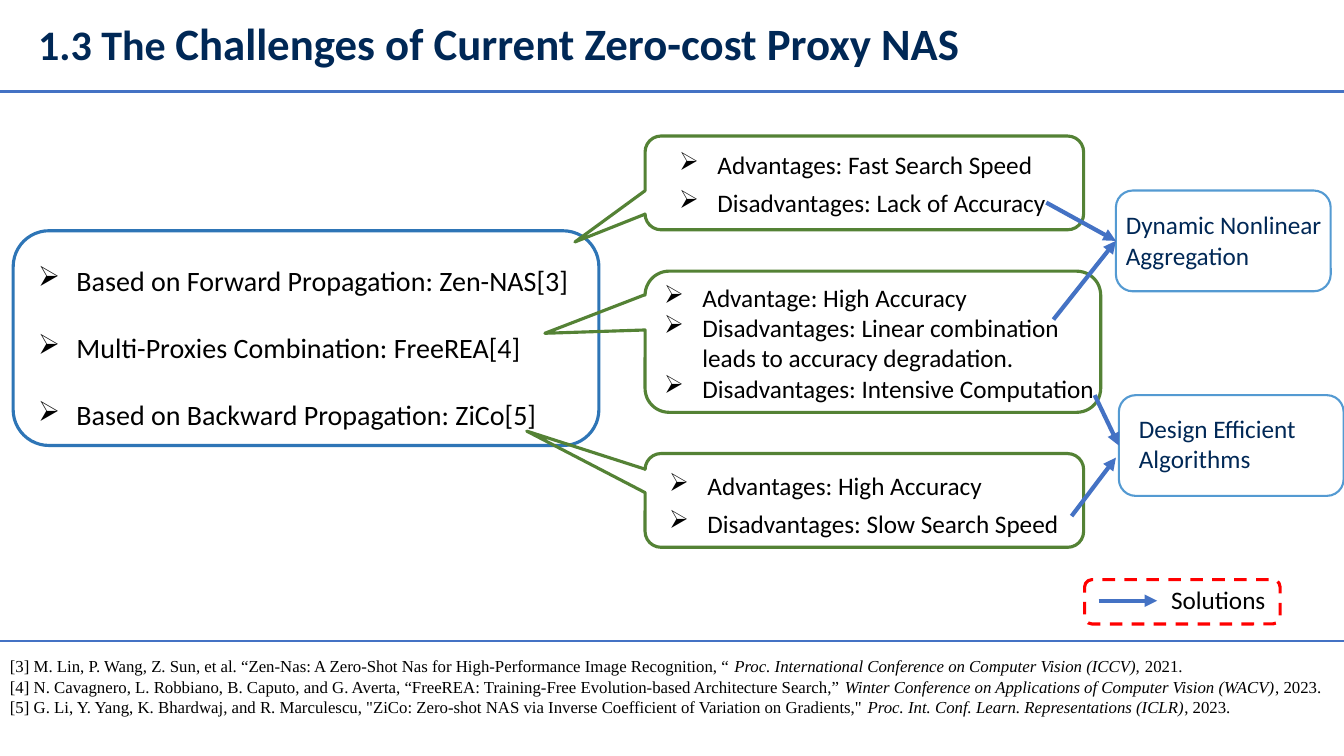
from lxml import etree
from pptx import Presentation
from pptx.dml.color import RGBColor
from pptx.enum.dml import MSO_LINE
from pptx.enum.shapes import MSO_CONNECTOR, MSO_SHAPE
from pptx.enum.text import MSO_ANCHOR, MSO_AUTO_SIZE
from pptx.oxml.ns import qn
from pptx.util import Inches, Pt

ROUNDED = MSO_SHAPE.ROUNDED_RECTANGLE
CALLOUT = MSO_SHAPE.ROUNDED_RECTANGULAR_CALLOUT
STRAIGHT = MSO_CONNECTOR.STRAIGHT
DASH = MSO_LINE.DASH
MIDDLE = MSO_ANCHOR.MIDDLE
GROW = MSO_AUTO_SIZE.SHAPE_TO_FIT_TEXT
LEFT_SIDE = 1

COLORS = {
    "navy": "002856",
    "black": "000000",
    "rule": "4472C4",
    "method": "2E75B6",
    "trait": "548235",
    "solution": "549AD2",
    "legend": "FF0000",
}


class Board:
    """A blank slide on a grid of 100 columns by 100 rows."""

    def __init__(self, deck):
        self.slide = deck.slides.add_slide(deck.slide_layouts[6])
        self.shapes = self.slide.shapes
        self.column = deck.slide_width / 100
        self.row = deck.slide_height / 100

    def place(self, *lengths):
        """Turn alternating columns and rows into EMU."""
        units = (self.column, self.row) * 2
        return [round(length * unit) for length, unit in zip(lengths, units)]

    def stroke(self, line, color, width):
        line.color.rgb = RGBColor.from_string(COLORS[color])
        line.width = Pt(width)

    def outline(self, kind, area, color, width=2.25, adjustments=()):
        shape = self.shapes.add_shape(kind, *self.place(*area))
        shape.shadow.inherit = False
        shape.fill.background()
        self.stroke(shape.line, color, width)
        for index, value in enumerate(adjustments):
            shape.adjustments[index] = value
        return shape

    def line(self, start, end, width=1.75, arrow=False, target=None):
        connector = self.shapes.add_connector(STRAIGHT, *self.place(*start, *end))
        if target is not None:
            connector.end_connect(target, LEFT_SIDE)
        self.stroke(connector.line, "rule", width)
        if arrow:
            etree.SubElement(connector.line._get_or_add_ln(), qn("a:tailEnd"), type="triangle")
        etree.SubElement(connector._element.spPr, qn("a:effectLst"))

    def arrow(self, start, end, target=None):
        self.line(start, end, 3, True, target)

    def text(self, area, paragraphs, size=18, color="black", font="Calibri",
             spacing=None, bullet=False, bold=None):
        """Each paragraph is a string or a list of (text, run font settings)."""
        box = self.shapes.add_textbox(*self.place(*area))
        frame = box.text_frame
        frame.word_wrap = True
        frame.auto_size = GROW
        for index, content in enumerate(paragraphs):
            paragraph = frame.paragraphs[0] if index == 0 else frame.add_paragraph()
            if spacing:
                paragraph.line_spacing = spacing
            if bullet:
                properties = paragraph._p.get_or_add_pPr()
                indent = Inches(0.38)
                properties.set("marL", str(indent))
                properties.set("indent", str(-indent))
                etree.SubElement(properties, qn("a:buChar"), char="➢")
            paragraph.font.name = font
            paragraph.font.size = Pt(size)
            paragraph.font.bold = bold
            paragraph.font.color.rgb = RGBColor.from_string(COLORS[color])
            pieces = [(content, {})] if isinstance(content, str) else content
            for words, settings in pieces:
                run = paragraph.add_run()
                run.text = words
                for name, value in settings.items():
                    setattr(run.font, name, value)
        return frame


REFERENCES = [
    ("[3] M. Lin, P. Wang, Z. Sun, et al. “Zen-Nas: A Zero-Shot Nas for "
     "High-Performance Image Recognition, “ ",
     "Proc. International Conference on Computer Vision (ICCV), ", "2021."),
    ("[4] N. Cavagnero, L. Robbiano, B. Caputo, and G. Averta, “FreeREA: "
     "Training-Free Evolution-based Architecture Search,” ",
     "Winter Conference on Applications of Computer Vision (WACV)", ", 2023."),
    ("[5] G. Li, Y. Yang, K. Bhardwaj, and R. Marculescu, \"ZiCo: Zero-shot NAS "
     "via Inverse Coefficient of Variation on Gradients,\" ",
     "Proc. Int. Conf. Learn. Representations (ICLR)", ", 2023."),
]

METHODS = [
    "Based on Forward Propagation: Zen-NAS[3]",
    "Multi-Proxies Combination: FreeREA[4]",
    "Based on Backward Propagation: ZiCo[5]",
]

# Callout area, pointer position, text area, line spacing, statements
TRAITS = [
    ((48, 18, 32.63, 12.4), (-0.66, 0.63), (49.8, 18.13, 33.45, 15.47), 1.25,
     ["Advantages: Fast Search Speed", "Disadvantages: Lack of Accuracy"]),
    ((48, 60, 32.63, 12.4), (-0.77, -0.74), (49.05, 60.53, 34.95, 11.07), 1.25,
     ["Advantages: High Accuracy", "Disadvantages: Slow Search Speed"]),
    ((48, 35.87, 33.9, 18.67), (-0.72, -0.06), (48.68, 36.67, 34.35, 26), None,
     ["Advantage: High Accuracy",
      "Disadvantages: Linear combination leads to accuracy degradation.",
      "Disadvantages: Intensive Computation"]),
]


def main():
    deck = Presentation()
    deck.slide_width, deck.slide_height = Inches(13.33), Inches(7.5)
    board = Board(deck)

    title = board.text(
        (2.1, 1.87, 80.55, 8.53),
        [[("1.3 The ", {"size": Pt(30)}),
          ("Challenges of Current Zero-cost Proxy NAS", {})]],
        size=32, color="navy", spacing=0.9, bold=True)
    title.auto_size = MSO_AUTO_SIZE.NONE
    title.vertical_anchor = MIDDLE
    for level in (12.13, 84.8):
        board.line((0, level), (100, level))

    board.text((0, 86.13, 100.88, 9.47),
               [[(work, {}), (venue, {"italic": True}), (year, {})]
                for work, venue, year in REFERENCES],
               size=12, font="Times New Roman")

    board.text((2.1, 29.73, 41.4, 36.4), METHODS, size=20, spacing=2, bullet=True)
    board.outline(ROUNDED, (0.98, 30.53, 43.58, 28.4), "method")

    for area, pointer, text_area, spacing, statements in TRAITS:
        board.outline(CALLOUT, area, "trait", adjustments=(*pointer, 0.17))
        board.text(text_area, statements, spacing=spacing, bullet=True)

    aggregation = board.outline(ROUNDED, (83.03, 25.2, 15.98, 13.33), "solution", 1.5)
    board.text((83.03, 27.07, 16.95, 13.47), ["Dynamic Nonlinear Aggregation"], color="navy")
    for start in ((78.38, 42.27), (77.85, 26.8)):
        board.arrow(start, (83.03, 31.87), aggregation)

    efficiency = board.outline(ROUNDED, (83.25, 52.27, 16.73, 13.33), "solution", 1.5)
    board.text((84, 54, 16.95, 9.47), ["Design Efficient Algorithms"], color="navy")
    board.arrow((81.45, 52.27), (83.25, 58.93), efficiency)
    board.arrow((79.73, 68.27), (83.03, 60.53))

    board.arrow((81.75, 79.47), (86.1, 79.47))
    board.text((86.4, 76.67, 10.28, 5.33), ["Solutions"])
    legend = board.outline(ROUNDED, (80.7, 76.67, 14.55, 5.87), "legend")
    legend.line.dash_style = DASH

    deck.save("out.pptx")


if __name__ == "__main__":
    main()
